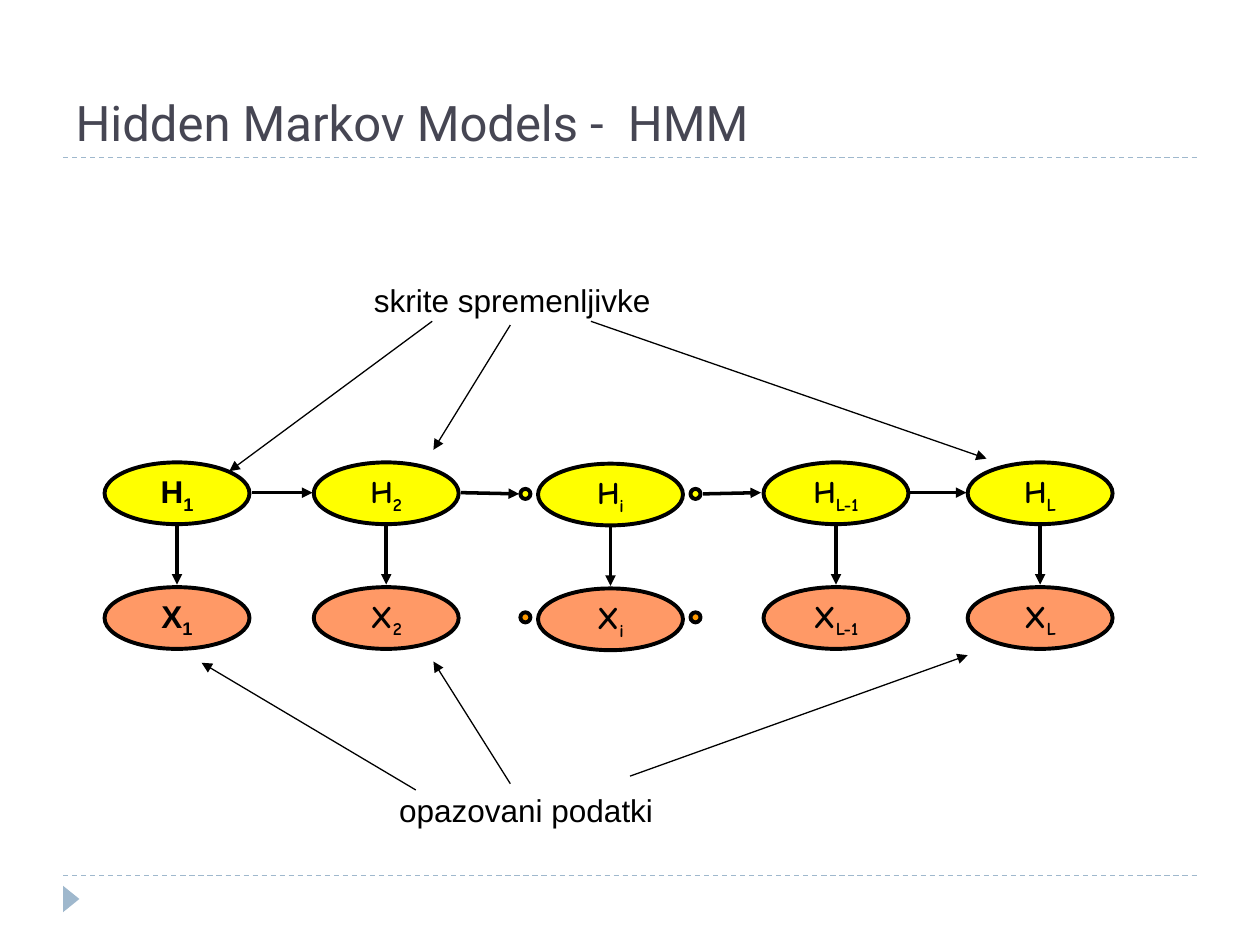
from lxml.etree import SubElement
from pptx import Presentation
from pptx.dml.color import RGBColor
from pptx.enum.dml import MSO_LINE
from pptx.enum.shapes import MSO_CONNECTOR, MSO_SHAPE
from pptx.enum.text import MSO_ANCHOR as Anchor, MSO_AUTO_SIZE as AutoSize, PP_ALIGN as Align
from pptx.oxml.ns import qn
from pptx.util import Inches, Pt

COLORS = {"ink": "000000", "title": "464653", "accent": "9FB8CD",
          "hidden": "FFFF00", "observed": "FF9966", "observed_dot": "FF9900"}
NODE_W, NODE_H, DOT = 1.15, 0.49, 0.08


def color(name):
    return RGBColor.from_string(COLORS[name])


class Diagram:
    """Holds the text style and the current page."""

    def __init__(self, page):
        self.page = page
        self.style = {"name": "Arial", "size": Pt(18)}

    def span(self, para, text, ink="ink", **changes):
        span = para.add_run()
        span.text = text
        for key, value in {**self.style, **changes}.items():
            setattr(span.font, key, value)
        span.font.color.rgb = color(ink)
        return span

    def title(self, text, left, top, width, height):
        box = self.page.shapes.title
        place = {"left": left, "top": top, "width": width, "height": height}
        for key, value in place.items():
            setattr(box, key, Inches(value))
        frame = box.text_frame
        frame.vertical_anchor = Anchor.BOTTOM
        frame.auto_size = AutoSize.NONE
        para = frame.paragraphs[0]
        para.alignment = Align.LEFT
        self.span(para, text, "title", name="Roboto", size=Pt(28))

    def shape(self, kind, left, top, width, height, fill, border=None):
        shape = self.page.shapes.add_shape(kind, *map(Inches, (left, top, width, height)))
        shape.shadow.inherit = False
        shape.fill.solid()
        shape.fill.fore_color.rgb = color(fill)
        if border:
            shape.line.color.rgb = color("ink")
            shape.line.width = Pt(border)
        else:
            shape.line.fill.background()
        return shape

    def node(self, left, top, fill, letter, index, font):
        shape = self.shape(MSO_SHAPE.OVAL, left, top, NODE_W, NODE_H, fill, 2.25)
        frame = shape.text_frame
        frame.word_wrap = False
        frame.vertical_anchor = Anchor.MIDDLE
        para = frame.paragraphs[0]
        para.alignment = Align.CENTER
        self.span(para, letter, name=font, bold=True)
        subscript = self.span(para, index, name=font, bold=True)
        subscript.font._element.set("baseline", "-25000")

    def dot(self, left, top, fill):
        self.shape(MSO_SHAPE.OVAL, left, top, DOT, DOT, fill, 2.25)

    def label(self, text, left, top):
        box = self.page.shapes.add_textbox(*map(Inches, (left, top, 2.83, 0.4)))
        frame = box.text_frame
        frame.word_wrap = True
        frame.auto_size = AutoSize.SHAPE_TO_FIT_TEXT
        self.span(frame.paragraphs[0], text)

    def line(self, start, end, ink="ink", width=0.75):
        line = self.page.shapes.add_connector(
            MSO_CONNECTOR.STRAIGHT, *map(Inches, (*start, *end)))
        line.line.color.rgb = color(ink)
        line.line.width = Pt(width)
        SubElement(line._element.spPr, qn("a:effectLst"))
        return line

    def rule(self, top):
        self.line((0.5, top), (9.5, top), "accent").line.dash_style = MSO_LINE.DASH

    def arrow(self, start, end, width=0.75):
        outline = self.line(start, end, width=width).line._get_or_add_ln()
        SubElement(outline, qn("a:tailEnd"), type="triangle")


def main():
    deck = Presentation()
    deck.slide_width, deck.slide_height = Inches(10), Inches(7.5)
    diagram = Diagram(deck.slides.add_slide(deck.slide_layouts[5]))

    # Page frame and title
    for top in (6.95, 1.25):
        diagram.rule(top)
    marker = diagram.shape(MSO_SHAPE.ISOSCELES_TRIANGLE, 0.46, 7.07, 0.21, 0.13, "accent")
    marker.rotation = 90
    diagram.title("Hidden Markov Models -  HMM", 0.5, 0, 8.17, 1.25)

    # Chain: each hidden state points down to its observation
    columns = [("1", 0.83, 0, "Arial"), ("2", 2.49, 0, "Comic Neue"),
               ("i", 4.27, 0.01, "Comic Neue"), ("L-1", 6.06, 0, "Comic Neue"),
               ("L", 7.68, 0, "Comic Neue")]
    for index, left, drop, font in columns:
        diagram.node(left, 3.67 + drop, "hidden", "H", index, font)
        diagram.node(left, 4.66 + drop, "observed", "X", index, font)
        center = left + NODE_W / 2
        diagram.arrow((center, 4.17 + drop), (center, 4.64 + drop), 2)

    # Dots for the omitted states
    for left in (4.13, 5.48):
        diagram.dot(left, 3.88, "hidden")
        diagram.dot(left, 4.86, "observed_dot")

    # Transitions between hidden states
    for start, end in [((2, 3.91), (2.48, 3.91)), ((3.66, 3.91), (4.12, 3.92)),
                       ((5.58, 3.92), (6.04, 3.91)), ((7.22, 3.91), (7.67, 3.91))]:
        diagram.arrow(start, end, 2)

    # Labels with their pointers
    diagram.label("skrite spremenljivke", 2.87, 2.18)
    diagram.label("opazovani podatki", 3.07, 6.23)
    for start, end in [((3.43, 2.55), (1.82, 3.74)), ((4.05, 2.58), (3.44, 3.57)),
                       ((4.69, 2.55), (7.83, 3.64)), ((3.3, 6.27), (1.6, 5.26)),
                       ((4.05, 6.22), (3.44, 5.25)), ((5, 6.16), (7.68, 5.2))]:
        diagram.arrow(start, end)

    deck.save("out.pptx")


if __name__ == "__main__":
    main()
